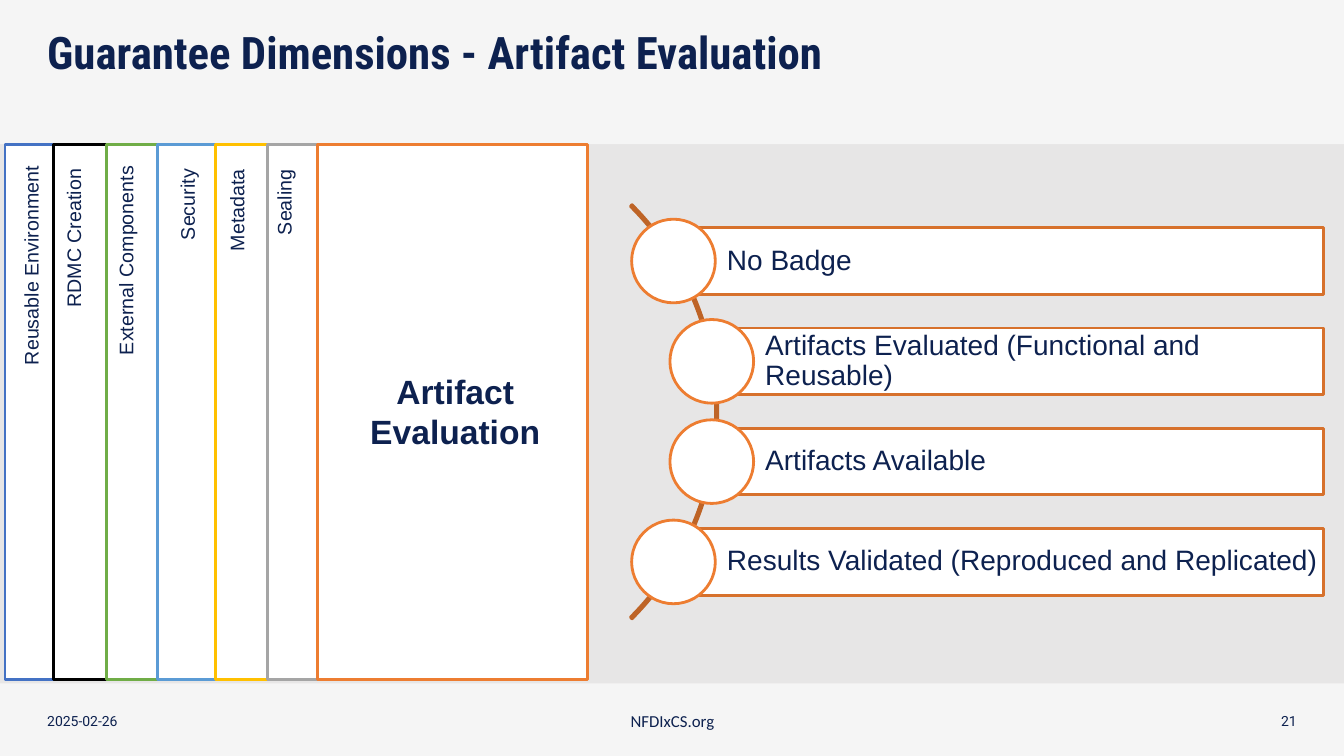
"""Builds the slide on artifact evaluation as a guarantee dimension."""
from lxml.etree import SubElement
from pptx import Presentation
from pptx.dml.color import RGBColor
from pptx.enum.shapes import MSO_SHAPE as Shape
from pptx.enum.text import MSO_ANCHOR as Anchor, PP_ALIGN as Align
from pptx.oxml.ns import qn
from pptx.util import Inches, Pt

COLORS = {
    "ground": "E7E6E6", "white": "FFFFFF", "navy": "0D214F", "black": "000000",
    "blue": "4472C4", "green": "70AD47", "sky": "5B9BD5", "yellow": "FFC000",
    "gray": "A5A5A5", "orange": "ED7D31", "bar": "D7712C", "arc": "BE6427",
}
WIDTH, HEIGHT = 13.33, 7.5
HEADER, FOOTER = 1.43, 6.78
MARGIN = 0.37

deck = Presentation()
deck.slide_width, deck.slide_height = Inches(WIDTH), Inches(HEIGHT)
page = deck.slides.add_slide(deck.slide_layouts[6])
page.background.fill.solid()
page.background.fill.fore_color.rgb = RGBColor.from_string(COLORS["ground"])


def add_shape(kind, left, top, width, height, fill=None, line=None):
    shape = page.shapes.add_shape(kind, *map(Inches, (left, top, width, height)))
    shape.shadow.inherit = False
    if fill:
        shape.fill.solid()
        shape.fill.fore_color.rgb = RGBColor.from_string(COLORS[fill])
    else:
        shape.fill.background()
    if line:
        shape.line.color.rgb = RGBColor.from_string(COLORS[line])
        shape.line.width = Pt(2)
    else:
        shape.line.fill.background()
    return shape


def write(box, text, size, font="Arial", bold=False, align=Align.LEFT,
          anchor=Anchor.TOP, wrap=True, spacing=1.0):
    frame = box.text_frame
    frame.word_wrap = wrap
    frame.vertical_anchor = anchor
    para = frame.paragraphs[0]
    para.text = text
    para.alignment = align
    para.line_spacing = spacing
    para.font.size = Pt(size)
    para.font.name = font
    para.font.bold = bold
    para.font.color.rgb = RGBColor.from_string(COLORS["navy"])


for top, bottom in ((FOOTER, HEIGHT), (0, HEADER)):
    strip = add_shape(Shape.RECTANGLE, 0, top, WIDTH, bottom - top, "white")
    tint = strip.fill._xPr.find(qn("a:solidFill"))[0]
    SubElement(tint, qn("a:alpha"), val="60000")

title = page.shapes.add_textbox(
    *map(Inches, (MARGIN, 0.26, WIDTH - 2 * MARGIN, HEADER - 0.26)))
write(title, "Guarantee Dimensions - Artifact Evaluation", 32, "Roboto Condensed",
      bold=True, spacing=0.9)

footers = (
    ("2025-02-26", MARGIN, 3, 10, "Roboto", Align.LEFT),
    ("21", WIDTH - MARGIN - 3, 3, 10, "Roboto", Align.RIGHT),
    ("NFDIxCS.org", 3.74, 5.86, 12, "Calibri", Align.CENTER),
)
for text, left, width, size, font, align in footers:
    note = page.shapes.add_textbox(*map(Inches, (left, 6.95, width, 0.4)))
    write(note, text, size, font, align=align, anchor=Anchor.MIDDLE)

CARD_WIDTH, CARD_HEIGHT = 2.68, 5.31
cards = (
    (0.05, "blue"), (0.53, "black"), (1.06, "green"), (1.56, "sky"),
    (2.14, "yellow"), (2.65, "gray"), (3.15, "orange"),
)
for left, color in cards:
    add_shape(Shape.RECTANGLE, left, HEADER, CARD_WIDTH, CARD_HEIGHT, "white", color)

LABEL_HEIGHT = 0.34
labels = (
    ("Reusable Environment", 0.31, 1.54, 2.18),
    ("RDMC Creation", 0.73, 1.56, 1.59),
    ("External Components", 1.25, 1.54, 2.08),
    ("Security", 1.86, 1.57, 0.91),
    ("Metadata", 2.35, 1.57, 1.02),
    ("Sealing", 2.82, 1.57, 0.86),
)
for text, center, top, length in labels:
    label = page.shapes.add_textbox(
        Inches(center - length / 2), Inches(top + (length - LABEL_HEIGHT) / 2),
        Inches(length), Inches(LABEL_HEIGHT))
    label.rotation = 270
    write(label, text, 14, wrap=False)

heading = page.shapes.add_textbox(*map(Inches, (3.38, 3.63, 2.27, 0.91)))
write(heading, "Artifact Evaluation", 24, bold=True, align=Align.CENTER)

arc = add_shape(Shape.BLOCK_ARC, 1.31, 1.18, 5.81, 5.81, line="arc")
for index, value in enumerate((189, 27, 0.004)):
    arc.adjustments[index] = value

BAR_HEIGHT, BAR_RIGHT, DOT = 0.66, 13.13, 0.83
FIRST_ROW, ROW_STEP = 2.59, 0.995
levels = (
    ("No Badge", 6.68),
    ("Artifacts Evaluated (Functional and Reusable)", 7.06),
    ("Artifacts Available", 7.06),
    ("Results Validated (Reproduced and Replicated)", 6.68),
)
for row, (text, left) in enumerate(levels):
    middle = FIRST_ROW + row * ROW_STEP
    bar = add_shape(Shape.RECTANGLE, left, middle - BAR_HEIGHT / 2,
                    BAR_RIGHT - left, BAR_HEIGHT, "white", "bar")
    frame = bar.text_frame
    frame.margin_left = Inches(0.53)
    frame.margin_top = frame.margin_right = frame.margin_bottom = Inches(0.06)
    write(bar, text, 20, anchor=Anchor.MIDDLE, spacing=0.9)
    add_shape(Shape.OVAL, left - DOT / 2, middle - DOT / 2, DOT, DOT, "white", "orange")

deck.save("out.pptx")
